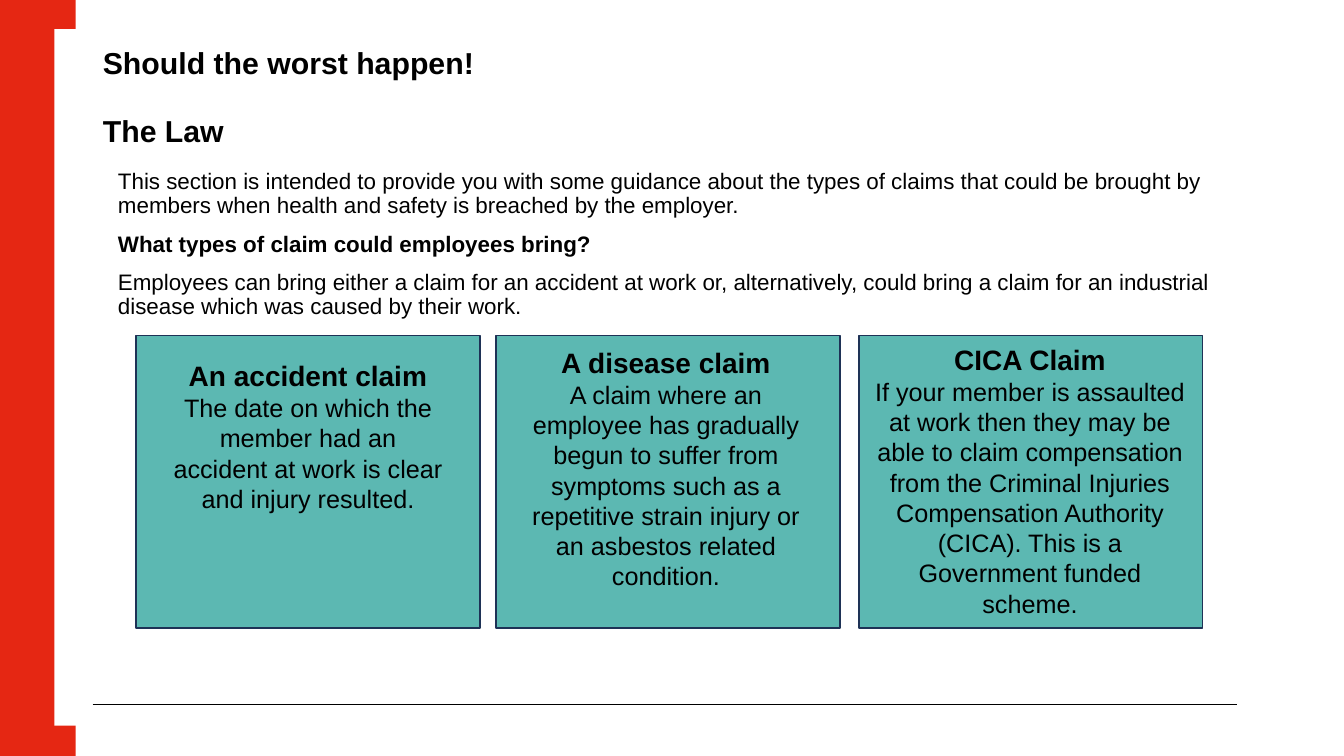
from lxml.etree import SubElement
from pptx import Presentation
from pptx.dml.color import RGBColor
from pptx.enum.shapes import MSO_CONNECTOR, MSO_SHAPE
from pptx.enum.text import MSO_ANCHOR, MSO_AUTO_SIZE, PP_ALIGN
from pptx.oxml.ns import qn
from pptx.util import Inches, Pt

RED = RGBColor(0xE5, 0x27, 0x13)
WHITE = RGBColor(0xFF, 0xFF, 0xFF)
BLACK = RGBColor(0x00, 0x00, 0x00)
TEAL = RGBColor(0x5C, 0xB8, 0xB2)
NAVY = RGBColor(0x1E, 0x32, 0x56)
FONT = "Arial"

TITLE_LINES = ["Should the worst happen!", "The Law"]
BODY = [
    ("This section is intended to provide you with some guidance about the types of claims "
     "that could be brought by members when health and safety is breached by the employer.", False),
    ("What types of claim could employees bring?", True),
    ("Employees can bring either a claim for an accident at work or, alternatively, could bring "
     "a claim for an industrial disease which was caused by their work.", False),
]
CARD_TOP, CARD_WIDTH, CARD_HEIGHT = 3.33, 3.41, 2.9
CLAIMS = [
    (1.35, (1.61, 3.51, 2.89, 1.95), "An accident claim",
     "The date on which the member had an accident at work is clear and injury resulted."),
    (4.92, (5.02, 3.38, 3.17, 2.56), "A disease claim",
     "A claim where an employee has gradually begun to suffer from symptoms such as a "
     "repetitive strain injury or an asbestos related condition."),
    (8.52, (8.52, 3.35, 3.39, 2.86), "CICA Claim",
     "If your member is assaulted at work then they may be able to claim compensation from the "
     "Criminal Injuries Compensation Authority (CICA). This is a Government funded scheme."),
]


def place(shape, left, top, width, height):
    """Move and size a shape, in inches."""
    shape.left, shape.top = Inches(left), Inches(top)
    shape.width, shape.height = Inches(width), Inches(height)


def add_rectangle(slide, box, fill, line=None):
    """Add a flat rectangle with an optional outline."""
    shape = slide.shapes.add_shape(MSO_SHAPE.RECTANGLE, *map(Inches, box))
    shape.shadow.inherit = False
    shape.fill.solid()
    shape.fill.fore_color.rgb = fill
    if line is None:
        shape.line.fill.background()
    else:
        shape.line.color.rgb = line
        shape.line.width = Pt(1)


def add_rule(slide, left, right, height):
    """Add a thin horizontal black line."""
    rule = slide.shapes.add_connector(
        MSO_CONNECTOR.STRAIGHT, Inches(left), Inches(height), Inches(right), Inches(height))
    rule.line.color.rgb = BLACK
    rule.line.width = Pt(1)
    SubElement(rule._element.spPr, qn("a:effectLst"))


def add_paragraph(text_frame, text, size, bold, alignment, space_before=0, line_spacing=1.0):
    """Write one paragraph without a bullet, using the first one if it is still empty."""
    first = not text_frame.text
    paragraph = text_frame.paragraphs[0] if first else text_frame.add_paragraph()
    properties = paragraph._p.get_or_add_pPr()
    properties.set("marL", "0")
    properties.set("indent", "0")
    SubElement(properties, qn("a:buNone"))
    paragraph.alignment = alignment
    paragraph.line_spacing = line_spacing
    paragraph.space_before = Pt(0 if first else space_before)
    run = paragraph.add_run()
    run.text = text
    run.font.name = FONT
    run.font.size = Pt(size)
    run.font.bold = bold
    run.font.color.rgb = BLACK


def fill_placeholder(placeholder, box, anchor, lines, size, space_before):
    """Position a placeholder and write its left-aligned lines."""
    place(placeholder, *box)
    text_frame = placeholder.text_frame
    text_frame.word_wrap = True
    text_frame.auto_size = MSO_AUTO_SIZE.NONE
    text_frame.vertical_anchor = anchor
    for text, bold in lines:
        add_paragraph(text_frame, text, size, bold, PP_ALIGN.LEFT, space_before, 0.9)


def add_claim(slide, left, text_area, heading, description):
    """Add a claim card with its heading and description."""
    add_rectangle(slide, (left, CARD_TOP, CARD_WIDTH, CARD_HEIGHT), TEAL, NAVY)
    text_frame = slide.shapes.add_textbox(*map(Inches, text_area)).text_frame
    text_frame.word_wrap = True
    add_paragraph(text_frame, heading, 20, True, PP_ALIGN.CENTER)
    add_paragraph(text_frame, description, 18, False, PP_ALIGN.CENTER)


def main():
    """Build and save the slide."""
    presentation = Presentation()
    presentation.slide_width, presentation.slide_height = Inches(13.33), Inches(7.5)
    slide = presentation.slides.add_slide(presentation.slide_layouts[1])
    add_rectangle(slide, (0, 0, 0.75, 7.5), RED)
    add_rectangle(slide, (0.54, 0.29, 0.28, 6.91), WHITE)
    add_rule(slide, 0.92, 12.27, 6.99)
    title, body = slide.placeholders
    fill_placeholder(title, (0.92, 0.4, 11.35, 1.16), MSO_ANCHOR.MIDDLE,
                     [(line, True) for line in TITLE_LINES], 21.6, 25)
    fill_placeholder(body, (1.07, 1.64, 11.35, 4.51), MSO_ANCHOR.TOP, BODY, 16, 10)
    for claim in CLAIMS:
        add_claim(slide, *claim)
    presentation.save("out.pptx")


if __name__ == "__main__":
    main()
